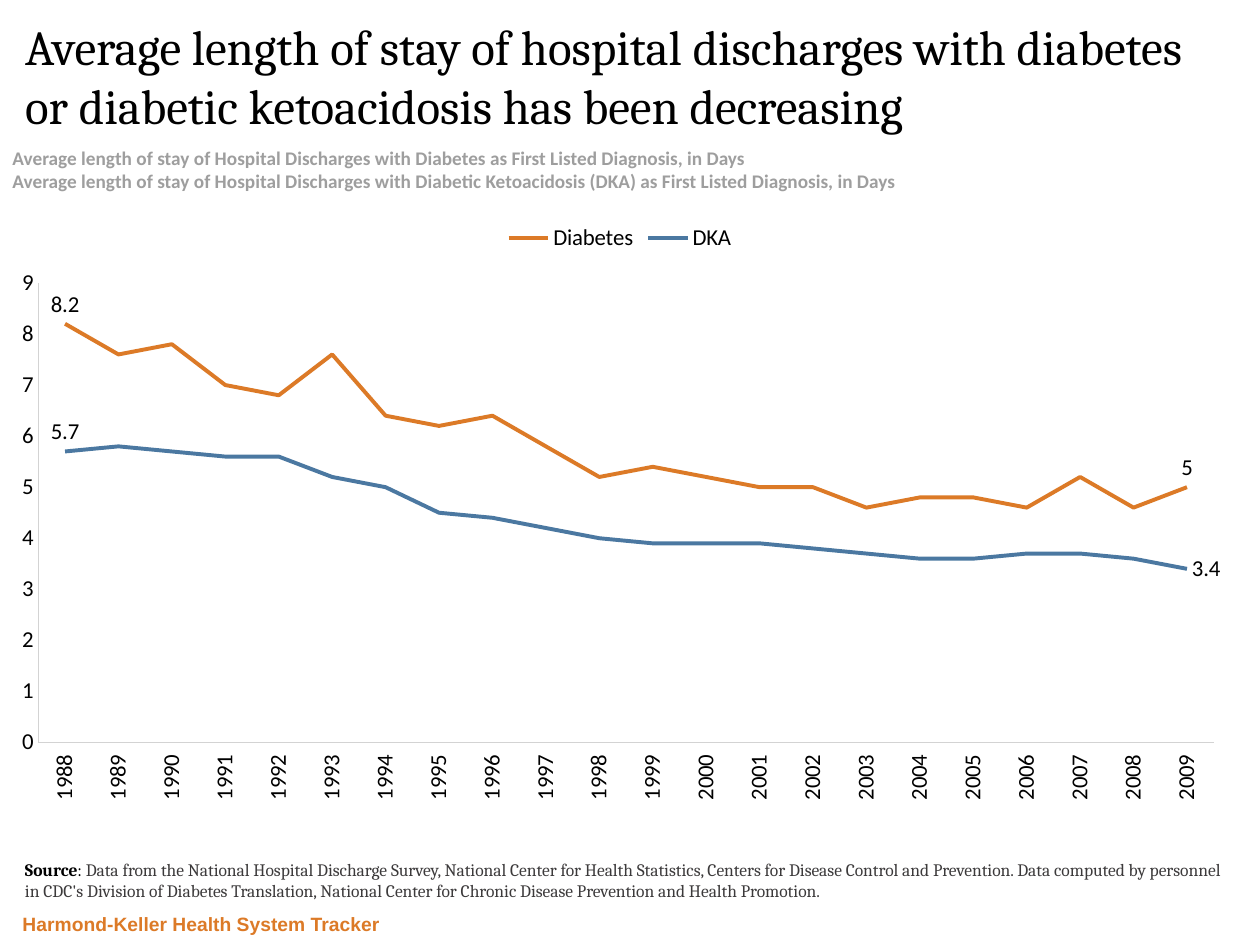
from dataclasses import dataclass

from lxml import etree
from pptx import Presentation
from pptx.chart.data import CategoryChartData
from pptx.dml.color import RGBColor
from pptx.enum import chart as charts, text
from pptx.oxml.ns import qn
from pptx.util import Inches, Pt

COLORS = {
    "black": "000000",
    "orange": "DC7A27",
    "blue": "4B78A1",
    "gray": "9E9E9E",
    "dark_gray": "3C3A3B",
    "axis": "D3D3D3",
}


@dataclass
class Run:
    content: str
    size: int
    font: str
    color: str
    bold: bool = False


@dataclass
class TextBlock:
    box: tuple[float, float, float, float]
    paragraphs: list[list[Run]]
    anchor: text.MSO_ANCHOR = text.MSO_ANCHOR.TOP


@dataclass
class Series:
    name: str
    color: str
    values: list[float]
    last_label: charts.XL_LABEL_POSITION


YEARS = [str(year) for year in range(1988, 2010)]
SERIES = [
    Series("Diabetes", "orange",
           [8.2, 7.6, 7.8, 7, 6.8, 7.6, 6.4, 6.2, 6.4, 5.8, 5.2,
            5.4, 5.2, 5, 5, 4.6, 4.8, 4.8, 4.6, 5.2, 4.6, 5],
           charts.XL_LABEL_POSITION.ABOVE),
    Series("DKA", "blue",
           [5.7, 5.8, 5.7, 5.6, 5.6, 5.2, 5, 4.5, 4.4, 4.2, 4,
            3.9, 3.9, 3.9, 3.8, 3.7, 3.6, 3.6, 3.7, 3.7, 3.6, 3.4],
           charts.XL_LABEL_POSITION.RIGHT),
]
PLOT_AREA = {"x": 0.03, "y": 0.12, "w": 0.95, "h": 0.76}

TITLE = TextBlock((0.1, 0.1, 9.8, 1), [[
    Run("Average length of stay of hospital discharges with diabetes or "
        "diabetic ketoacidosis has been decreasing", 28, "Cambria", "black"),
]], text.MSO_ANCHOR.MIDDLE)
SUBTITLE = TextBlock((0, 1.11, 9.58, 0.66), [
    [Run(f"Average length of stay of Hospital Discharges with {condition} "
         "as First Listed Diagnosis, in Days", 11, "Calibri", "gray", True)]
    for condition in ("Diabetes", "Diabetic Ketoacidosis (DKA)")
])
SOURCE = TextBlock((0.1, 6.4, 9.8, 0.8), [[
    Run("Source", 10, "Cambria", "black", True),
    Run(": ", 10, "Cambria", "black"),
    Run("Data from the National Hospital Discharge Survey, National Center for "
        "Health Statistics, Centers for Disease Control and Prevention. Data "
        "computed by personnel in CDC's Division of Diabetes Translation, "
        "National Center for Chronic Disease Prevention and Health Promotion.",
        10, "Cambria", "dark_gray"),
]], text.MSO_ANCHOR.BOTTOM)
FOOTER = TextBlock((0.08, 7.17, 7.98, 0.3), [[
    Run("Harmond-Keller Health System Tracker", 11, "Arial", "orange", True),
]], text.MSO_ANCHOR.BOTTOM)


def rgb(name: str) -> RGBColor:
    return RGBColor.from_string(COLORS[name])


def fill_text(shape, block: TextBlock) -> None:
    shape.left, shape.top, shape.width, shape.height = map(Inches, block.box)
    frame = shape.text_frame
    frame.word_wrap = True
    frame.auto_size = text.MSO_AUTO_SIZE.NONE
    frame.vertical_anchor = block.anchor
    for index, runs in enumerate(block.paragraphs):
        paragraph = frame.add_paragraph() if index else frame.paragraphs[0]
        paragraph.alignment = text.PP_ALIGN.LEFT
        for item in runs:
            run = paragraph.add_run()
            run.text = item.content
            run.font.size = Pt(item.size)
            run.font.name = item.font
            run.font.bold = item.bold
            run.font.color.rgb = rgb(item.color)


def add_text(slide, block: TextBlock) -> None:
    fill_text(slide.shapes.add_textbox(*map(Inches, block.box)), block)


def place_plot_area(chart) -> None:
    """Fix the inner plot area as fractions of the chart frame."""
    plot_area = chart.plots[0]._element.getparent()
    for old in plot_area.findall(qn("c:layout")):
        plot_area.remove(old)
    layout = etree.Element(qn("c:layout"))
    manual = etree.SubElement(layout, qn("c:manualLayout"))
    settings = {"layoutTarget": "inner", "xMode": "edge", "yMode": "edge", **PLOT_AREA}
    for tag, value in settings.items():
        etree.SubElement(manual, qn(f"c:{tag}")).set("val", str(value))
    plot_area.insert(0, layout)


def style_axes(chart) -> None:
    for axis in (chart.category_axis, chart.value_axis):
        axis.has_major_gridlines = False
        axis.major_tick_mark = axis.minor_tick_mark = charts.XL_TICK_MARK.NONE
        axis.format.line.color.rgb = rgb("axis")
        axis.format.line.width = Pt(0.75)
        axis.tick_labels.font.size = Pt(13)
    chart.category_axis.tick_label_position = charts.XL_TICK_LABEL_POSITION.LOW
    body = chart.category_axis._element.find(qn("c:txPr")).find(qn("a:bodyPr"))
    body.set("rot", "-5400000")
    body.set("vert", "horz")
    value_axis = chart.value_axis
    value_axis.minimum_scale, value_axis.maximum_scale = 0, 9
    value_axis.major_unit = 1
    value_axis.tick_labels.number_format = "#,##0"
    value_axis.tick_labels.number_format_is_linked = False


def label_point(series, index: int, value: float, position) -> None:
    label = series.points[index].data_label
    run = label.text_frame.paragraphs[0].add_run()
    run.text = f"{value:g}"
    run.font.size = Pt(13)
    run.font.name = "Calibri"
    run.font.color.rgb = rgb("black")
    label.position = position


def add_line_chart(slide) -> None:
    data = CategoryChartData()
    data.categories = YEARS
    for item in SERIES:
        data.add_series(item.name, item.values)
    chart = slide.shapes.add_chart(
        charts.XL_CHART_TYPE.LINE, *map(Inches, (0.01, 1.67, 9.82, 4.8)), data
    ).chart
    chart.has_title = False
    chart.font.size = Pt(13)
    chart.font.name = "Calibri"
    chart.font.color.rgb = rgb("black")
    chart.has_legend = True
    chart.legend.position = charts.XL_LEGEND_POSITION.TOP
    chart.legend.include_in_layout = False
    chart.plots[0].vary_by_categories = False
    style_axes(chart)
    place_plot_area(chart)
    for series, item in zip(chart.plots[0].series, SERIES):
        series.smooth = False
        series.marker.style = charts.XL_MARKER_STYLE.NONE
        series.format.line.color.rgb = rgb(item.color)
        series.format.line.width = Pt(2.25)
        label_point(series, 0, item.values[0], charts.XL_LABEL_POSITION.ABOVE)
        label_point(series, len(YEARS) - 1, item.values[-1], item.last_label)


def main() -> None:
    presentation = Presentation()
    presentation.slide_width, presentation.slide_height = Inches(10), Inches(7.5)
    slide = presentation.slides.add_slide(presentation.slide_layouts[5])
    fill_text(slide.shapes.title, TITLE)
    for block in (FOOTER, SOURCE, SUBTITLE):
        add_text(slide, block)
    add_line_chart(slide)
    presentation.save("out.pptx")


if __name__ == "__main__":
    main()
